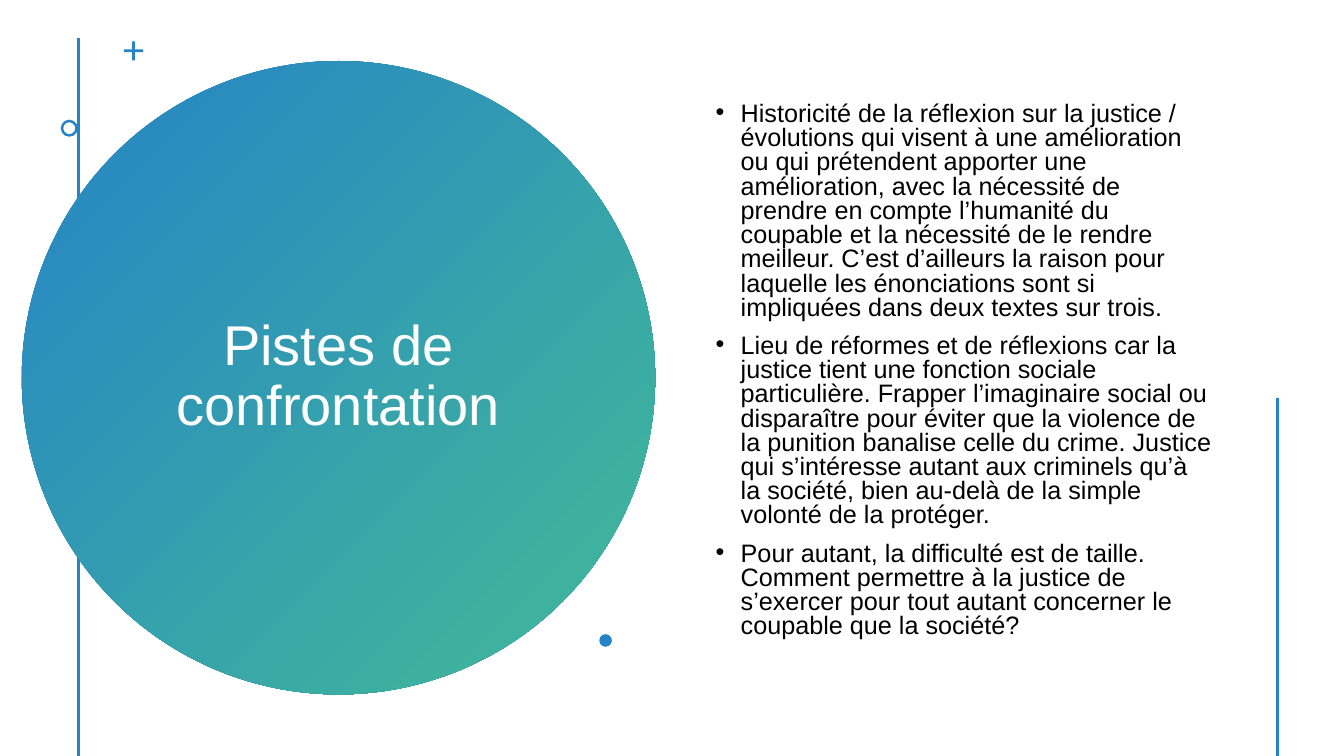
import pptx
import pptx.dml.color
import pptx.enum.shapes
import pptx.enum.text
import pptx.oxml
import pptx.oxml.ns
import pptx.util
from lxml import etree

Pt = pptx.util.Pt
SHAPES = pptx.enum.shapes.MSO_SHAPE
BLUE, GREEN, WHITE, BLACK = "2683C6", "42BA97", "FFFFFF", "000000"
FONT = "Arial"

POINTS = [
    "Historicité de la réflexion sur la justice / évolutions qui visent à une "
    "amélioration ou qui prétendent apporter une amélioration, avec la nécessité de "
    "prendre en compte l’humanité du coupable et la nécessité de le rendre meilleur. "
    "C’est d’ailleurs la raison pour laquelle les énonciations sont si impliquées "
    "dans deux textes sur trois.",
    "Lieu de réformes et de réflexions car la justice tient une fonction sociale "
    "particulière. Frapper l’imaginaire social ou disparaître pour éviter que la "
    "violence de la punition banalise celle du crime. Justice qui s’intéresse autant "
    "aux criminels qu’à la société, bien au-delà de la simple volonté de la protéger.",
    "Pour autant, la difficulté est de taille. Comment permettre à la justice de "
    "s’exercer pour tout autant concerner le coupable que la société?",
]


def color(hex_string):
    return pptx.dml.color.RGBColor.from_string(hex_string)


def add_vertical_line(slide, x, top, bottom):
    line = slide.shapes.add_connector(
        pptx.enum.shapes.MSO_CONNECTOR.STRAIGHT, Pt(x), Pt(top), Pt(x), Pt(bottom))
    line.line.color.rgb = color(BLUE)
    line.line.width = Pt(2)
    etree.SubElement(line._element.spPr, pptx.oxml.ns.qn("a:effectLst"))


def add_ornament(slide, kind, left, top, size, adjustment=None):
    """Add a square, outline-free blue shape."""
    shape = slide.shapes.add_shape(kind, Pt(left), Pt(top), Pt(size), Pt(size))
    shape.shadow.inherit = False
    shape.line.fill.background()
    shape.fill.solid()
    shape.fill.fore_color.rgb = color(BLUE)
    if adjustment is not None:
        shape.adjustments[0] = adjustment
    return shape


def add_gradient_circle(slide, left, top, size):
    circle = add_ornament(slide, SHAPES.OVAL, left, top, size)
    circle.fill.gradient()
    circle.fill.gradient_angle = 315
    for stop, shade in zip(circle.fill.gradient_stops, (BLUE, GREEN)):
        stop.color.rgb = color(shade)


def format_paragraph(paragraph, size, shade, line_spacing):
    paragraph.line_spacing = line_spacing
    for run in paragraph.runs:
        run.font.name = FONT
        run.font.size = Pt(size)
        run.font.color.rgb = color(shade)


def prepare_frame(text_frame):
    text_frame.word_wrap = True
    text_frame.auto_size = pptx.enum.text.MSO_AUTO_SIZE.NONE
    text_frame.vertical_anchor = pptx.enum.text.MSO_ANCHOR.MIDDLE


def place_title(slide, text, left, top, width, height):
    title = slide.shapes.title
    title.left, title.top = Pt(left), Pt(top)
    title.width, title.height = Pt(width), Pt(height)
    title.text_frame.text = text
    prepare_frame(title.text_frame)
    paragraph = title.text_frame.paragraphs[0]
    paragraph.alignment = pptx.enum.text.PP_ALIGN.CENTER
    format_paragraph(paragraph, 40, WHITE, 0.9)
    # The title must lie in front of the circle.
    slide.shapes._spTree.append(title._element)


def add_bullet(paragraph, indent):
    properties = paragraph._p.get_or_add_pPr()
    properties.set("marL", str(Pt(indent)))
    properties.set("indent", str(-Pt(indent)))
    font = etree.SubElement(properties, pptx.oxml.ns.qn("a:buFont"))
    font.set("typeface", FONT)
    bullet = etree.SubElement(properties, pptx.oxml.ns.qn("a:buChar"))
    bullet.set("char", "•")


def add_bullet_list(slide, texts, left, top, width, height):
    box = slide.shapes.add_textbox(Pt(left), Pt(top), Pt(width), Pt(height))
    text_frame = box.text_frame
    prepare_frame(text_frame)
    for index, text in enumerate(texts):
        paragraph = text_frame.add_paragraph() if index else text_frame.paragraphs[0]
        paragraph.text = text
        paragraph.space_before = Pt(10)
        format_paragraph(paragraph, 18, BLACK, 0.8)
        add_bullet(paragraph, 18)


def main():
    presentation = pptx.Presentation()
    presentation.slide_width, presentation.slide_height = Pt(960), Pt(540)
    slide = presentation.slides.add_slide(presentation.slide_layouts[5])

    add_vertical_line(slide, 56, 27.5, 540)
    add_gradient_circle(slide, 15.6, 43.6, 452.4)
    place_title(slide, "Pistes de confrontation", 98, 101.5, 287.3, 336.2)
    add_ornament(slide, SHAPES.CROSS, 88.6, 29.5, 13.6, 0.43)
    add_ornament(slide, SHAPES.DONUT, 43.4, 85.5, 12.2, 0.15)
    add_bullet_list(slide, POINTS, 504, 30.2, 368.6, 470.2)
    add_ornament(slide, SHAPES.OVAL, 428.1, 453, 9)
    add_vertical_line(slide, 912.3, 284, 540)

    presentation.save("out.pptx")


if __name__ == "__main__":
    main()
